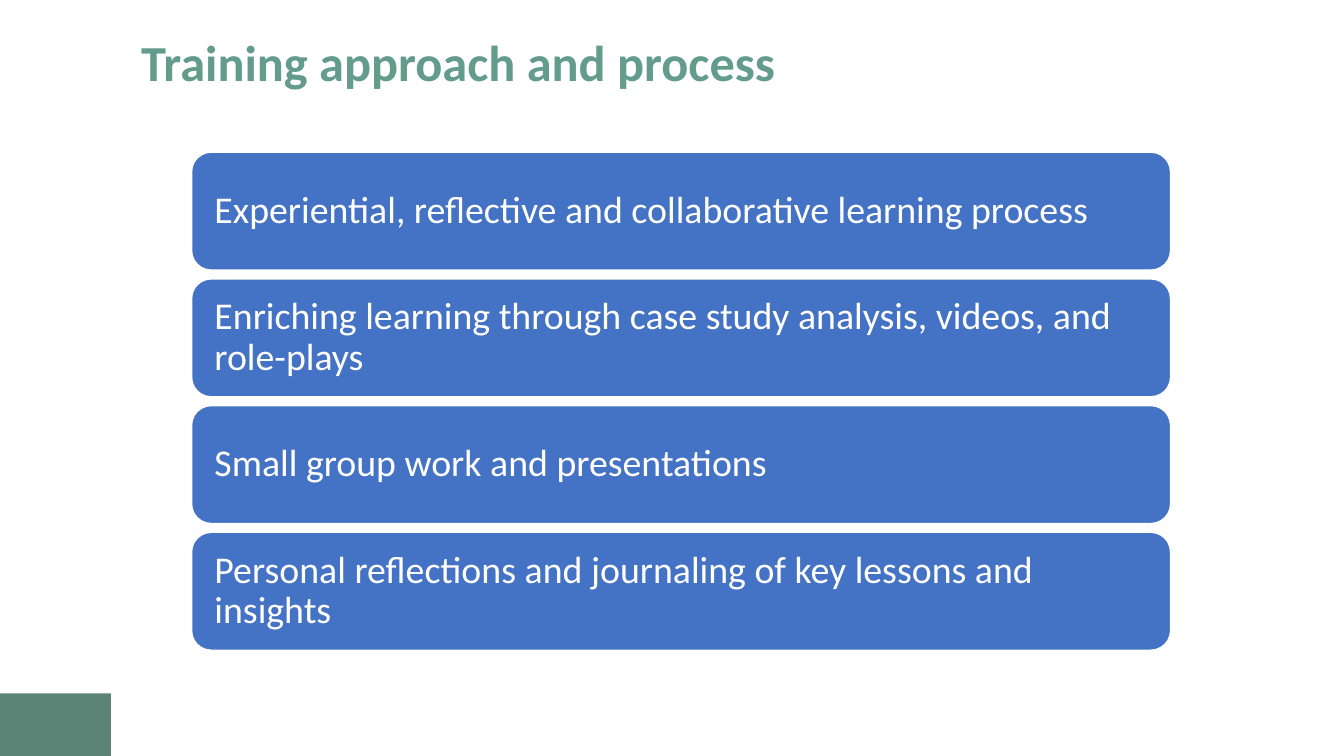
import pptx
import pptx.util
from pptx.dml.color import RGBColor
from pptx.enum.shapes import MSO_SHAPE
from pptx.enum.text import MSO_ANCHOR, PP_ALIGN
from pptx.util import Inches

COLORS = {"title": "639C8C", "corner": "5B8477", "card": "4472C4", "white": "FFFFFF"}

APPROACHES = [
    "Experiential, reflective and collaborative learning process",
    "Enriching learning through case study analysis, videos, and role-plays",
    "Small group work and presentations",
    "Personal reflections and journaling of key lessons and insights",
]


def rgb(name):
    return RGBColor.from_string(COLORS[name])


def write_text(tf, text, size, color, bold=False):
    tf.word_wrap = True
    tf.vertical_anchor = MSO_ANCHOR.MIDDLE
    p = tf.paragraphs[0]
    p.alignment = PP_ALIGN.LEFT
    p.line_spacing = 0.9
    r = p.add_run()
    r.text = text
    r.font.name = "Calibri"
    r.font.size = pptx.util.Pt(size)
    r.font.bold = bold
    r.font.color.rgb = rgb(color)


def add_block(s, kind, left, top, width, height, fill, line=None):
    sp = s.shapes.add_shape(kind, Inches(left), Inches(top), Inches(width), Inches(height))
    sp.shadow.inherit = False
    sp.fill.solid()
    sp.fill.fore_color.rgb = rgb(fill)
    if line:
        sp.line.color.rgb = rgb(line)
        sp.line.width = pptx.util.Pt(1)
    else:
        sp.line.fill.background()
    return sp


def set_title(s, text):
    sp = s.shapes.title
    sp.left, sp.top = Inches(1.3), Inches(0.29)
    sp.width, sp.height = Inches(11.11), Inches(0.71)
    write_text(sp.text_frame, text, size=36, color="title", bold=True)


def add_card(s, top, text):
    sp = add_block(s, MSO_SHAPE.ROUNDED_RECTANGLE, 1.9, top, 9.71, 1.17, "card", line="white")
    tf = sp.text_frame
    tf.margin_left, tf.margin_right = Inches(0.17), Inches(0.15)
    write_text(tf, text, size=27, color="white")


def main():
    prs = pptx.Presentation()
    prs.slide_width, prs.slide_height = Inches(13.33), Inches(7.5)
    s = prs.slides.add_slide(prs.slide_layouts[5])

    # Corner accent and title
    add_block(s, MSO_SHAPE.RECTANGLE, 0, 6.88, 1.1, 0.62, "corner")
    set_title(s, "Training approach and process")

    # Evenly spaced stack of approaches
    for i, text in enumerate(APPROACHES):
        add_card(s, 1.51 + i * 1.257, text)

    prs.save("out.pptx")


if __name__ == "__main__":
    main()
